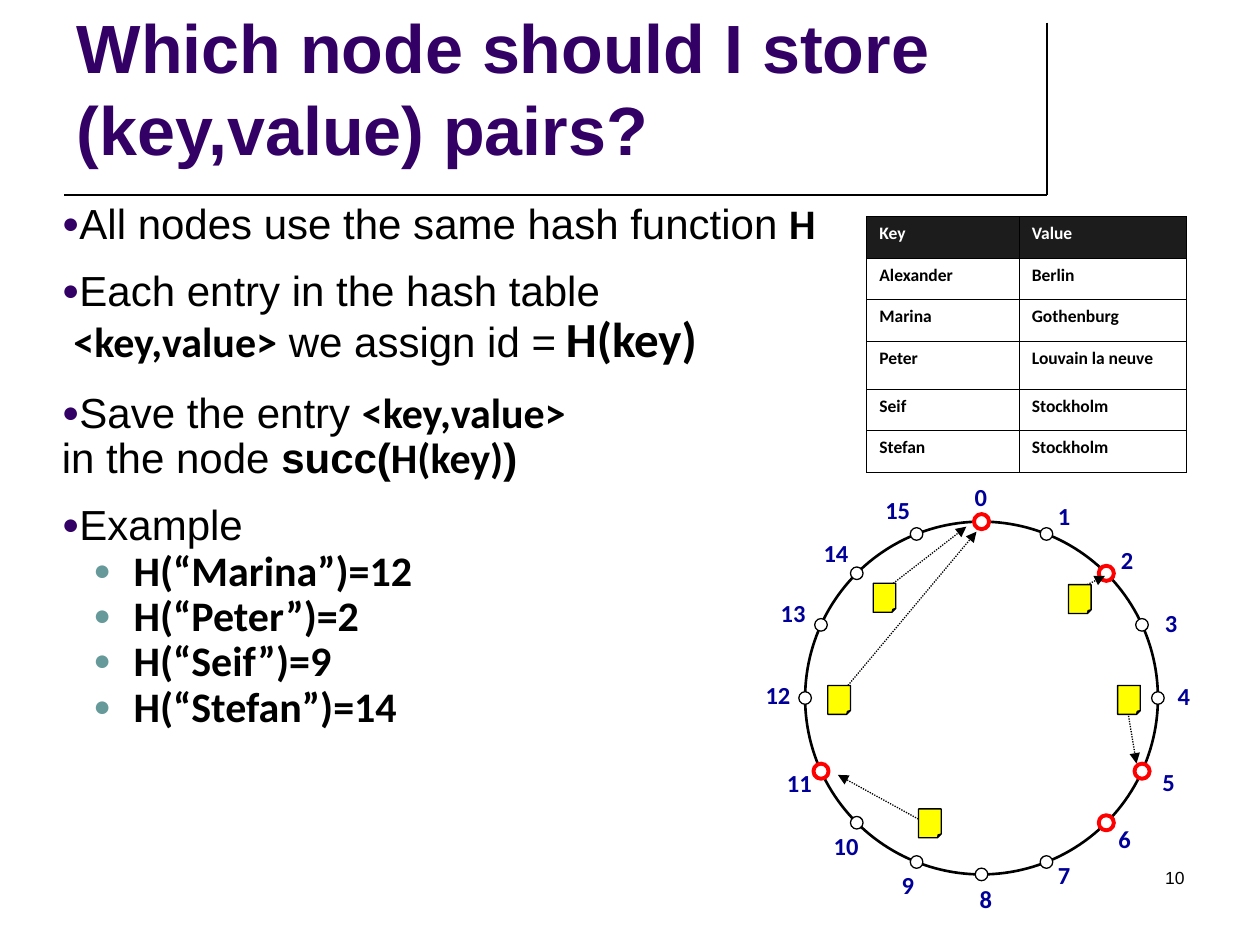
from dataclasses import dataclass
from math import cos, radians, sin

from lxml import etree
from pptx import Presentation
from pptx.dml.color import RGBColor
from pptx.enum.dml import MSO_LINE
from pptx.enum.shapes import MSO_CONNECTOR, MSO_SHAPE
from pptx.enum.text import MSO_ANCHOR, MSO_AUTO_SIZE, PP_ALIGN
from pptx.oxml.ns import qn
from pptx.util import Inches, Pt

STRAIGHT, DOTTED = MSO_CONNECTOR.STRAIGHT, MSO_LINE.ROUND_DOT
OVAL, NOTE = MSO_SHAPE.OVAL, MSO_SHAPE.FOLDED_CORNER
TOP, MIDDLE, BOTTOM = MSO_ANCHOR.TOP, MSO_ANCHOR.MIDDLE, MSO_ANCHOR.BOTTOM
LEFT, CENTER, RIGHT = PP_ALIGN.LEFT, PP_ALIGN.CENTER, PP_ALIGN.RIGHT
NO_AUTOFIT = MSO_AUTO_SIZE.NONE

@dataclass(frozen=True)
class Theme:
    sans: str = "Arial"
    accent_font: str = "Calibri"
    black: str = "000000"
    white: str = "FFFFFF"
    title: str = "330066"
    sub_bullet: str = "669999"
    label: str = "000099"
    active: str = "FF0000"
    note: str = "FFFF00"
    header: str = "1C1C1C"
    title_size: float = 39
    body_size: float = 24
    formula_size: float = 28
    label_size: float = 14
    small_size: float = 10

THEME = Theme()

@dataclass(frozen=True)
class Span:
    text: str
    font: str = THEME.sans
    size: float = THEME.body_size
    bold: bool = False
    color: str = THEME.black

@dataclass(frozen=True)
class Item:
    lines: tuple[tuple[Span, ...], ...]
    gap: float = 0
    level: int = 0

def code(text: str, size: float = THEME.body_size) -> Span:
    return Span(text, THEME.accent_font, size, True)

ITEMS = (
    Item(((Span("All nodes use the same hash function "), code("H")),)),
    Item(((Span("Each entry in the hash table"),),
          (Span(" "), code("<key,value>"), Span(" we assign id ="),
           Span(" ", size=20, bold=True), code("H(key)", THEME.formula_size))), 12.5),
    Item(((Span("Save the entry "), code("<key,value>")),
          (Span("in the node "), Span("succ(", bold=True), code("H(key)"),
           Span(")", bold=True))), 13.5),
    Item(((Span("Example"),),), 12.5),
    *(Item(((code(f"H(“{name}”)={key}"),),), level=1)
      for name, key in (("Marina", 12), ("Peter", 2), ("Seif", 9), ("Stefan", 14))),
)
ENTRIES = (("Key", "Value"), ("Alexander", "Berlin"), ("Marina", "Gothenburg"),
           ("Peter", "Louvain la neuve"), ("Seif", "Stockholm"), ("Stefan", "Stockholm"))
COLUMN_WIDTHS = (1.21, 1.33)
ROW_HEIGHTS = (0.33, 0.33, 0.33, 0.38, 0.33, 0.33)
RING_CENTER, RING_RADIUS = (7.79, 5.54), 1.4
QUARTER_ANGLES = (0, 21.6, 45, 65.5, 90)
ACTIVE_NODES = {0, 2, 5, 6, 11}
LABEL_CORNERS = ((7.55, 3.83), (8.21, 3.98), (8.71, 4.33), (9.06, 4.83),
                 (9.16, 5.41), (9.04, 6.09), (8.69, 6.54), (8.21, 6.83),
                 (7.59, 7.02), (6.97, 6.91), (6.48, 6.6), (6.11, 6.1),
                 (5.94, 5.4), (6.06, 4.75), (6.4, 4.27), (6.89, 3.93))
ARROWS = (((6.73, 5.44), (7.75, 4.22)), ((6.96, 4.73), (7.67, 4.18)),
          ((8.61, 4.65), (8.77, 4.57)), ((8.94, 5.58), (9.02, 6.06)),
          ((7.36, 6.54), (6.65, 6.15)))
NOTE_CORNERS = ((8.87, 5.44), (6.57, 5.44), (6.93, 4.63), (7.29, 6.42), (8.48, 4.64))

def rgb(value: str) -> RGBColor:
    return RGBColor.from_string(value)

def add_span(para, span: Span) -> None:
    run = para.add_run()
    run.text = span.text
    run.font.name, run.font.size, run.font.bold = span.font, Pt(span.size), span.bold
    run.font.color.rgb = rgb(span.color)

def set_frame(shape, left, top, width, height, anchor, margins=(0.1, 0.05)) -> None:
    shape.left, shape.top = Inches(left), Inches(top)
    shape.width, shape.height = Inches(width), Inches(height)
    frame = shape.text_frame
    frame.word_wrap, frame.auto_size, frame.vertical_anchor = True, NO_AUTOFIT, anchor
    frame.margin_left = frame.margin_right = Inches(margins[0])
    frame.margin_top = frame.margin_bottom = Inches(margins[1])

def add_label(page, area, span: Span, align, anchor, margins) -> None:
    box = page.shapes.add_textbox(*map(Inches, area))
    set_frame(box, *area, anchor, margins)
    box.text_frame.paragraphs[0].alignment = align
    add_span(box.text_frame.paragraphs[0], span)

def add_figure(page, kind, area, fill, line: str, weight: float):
    shape = page.shapes.add_shape(kind, *map(Inches, area))
    shape.shadow.inherit = False
    if fill:
        shape.fill.solid()
        shape.fill.fore_color.rgb = rgb(fill)
    else:
        shape.fill.background()
    shape.line.color.rgb, shape.line.width = rgb(line), Pt(weight)
    return shape

def add_line(page, start, end, weight: float, arrow: bool = False) -> None:
    connector = page.shapes.add_connector(STRAIGHT, *map(Inches, start + end))
    connector.line.color.rgb, connector.line.width = rgb(THEME.black), Pt(weight)
    properties = connector.element.spPr
    etree.SubElement(properties, qn("a:effectLst"))
    if arrow:
        connector.line.dash_style = DOTTED
        etree.SubElement(properties.find(qn("a:ln")), qn("a:tailEnd"), type="triangle")

def set_bullet(para, level: int) -> None:
    props = para._p.get_or_add_pPr()
    props.set("marL", str(Inches(0.57 * level)))
    props.set("indent", str(Inches(-0.32 * level)))
    color = etree.SubElement(props, qn("a:buClr"))
    etree.SubElement(color, qn("a:srgbClr"), val=THEME.sub_bullet if level else THEME.title)
    etree.SubElement(props, qn("a:buSzPct"), val="70000")
    etree.SubElement(props, qn("a:buFont"), typeface=THEME.sans)
    etree.SubElement(props, qn("a:buChar"), char="●")

def fill_body(frame) -> None:
    for index, item in enumerate(ITEMS):
        para = frame.add_paragraph() if index else frame.paragraphs[0]
        para.level = item.level
        set_bullet(para, item.level)
        para.alignment, para.line_spacing = LEFT, 0.9
        para.space_before, para.space_after = Pt(item.gap), Pt(0)
        for number, line in enumerate(item.lines):
            if number:
                para.add_line_break()
            for span in line:
                add_span(para, span)

def set_borders(cell) -> None:
    for index, side in enumerate(("lnL", "lnR", "lnT", "lnB")):
        border = etree.Element(qn(f"a:{side}"), w=str(Pt(0.5)))
        fill = etree.SubElement(border, qn("a:solidFill"))
        etree.SubElement(fill, qn("a:srgbClr"), val=THEME.black)
        cell._tc.get_or_add_tcPr().insert(index, border)

def add_entries(page) -> None:
    area = (6.88, 1.72, sum(COLUMN_WIDTHS), sum(ROW_HEIGHTS))
    table = page.shapes.add_table(len(ENTRIES), len(COLUMN_WIDTHS), *map(Inches, area)).table
    table.horz_banding = False
    for column, width in zip(table.columns, COLUMN_WIDTHS):
        column.width = Inches(width)
    for index, (row, height, texts) in enumerate(zip(table.rows, ROW_HEIGHTS, ENTRIES)):
        row.height = Inches(height)
        fill, color = (THEME.white, THEME.black) if index else (THEME.header, THEME.white)
        for cell, text in zip(row.cells, texts):
            cell.fill.solid()
            cell.fill.fore_color.rgb = rgb(fill)
            set_borders(cell)
            para = cell.text_frame.paragraphs[0]
            para.line_spacing = 0.98
            add_span(para, Span(text, THEME.accent_font, THEME.small_size, True, color))

def node_center(node: int) -> tuple[float, float]:
    """Clockwise from the top, mirroring the quarter angles around the ring."""
    half, step = divmod(node, 8)
    angle = QUARTER_ANGLES[step] if step <= 4 else 180 - QUARTER_ANGLES[8 - step]
    turn = radians(angle + 180 * half)
    return RING_CENTER[0] + RING_RADIUS * sin(turn), RING_CENTER[1] - RING_RADIUS * cos(turn)

def add_circle(page, center, diameter: float, fill, line: str, weight: float) -> None:
    corner = (value - diameter / 2 for value in center)
    add_figure(page, OVAL, (*corner, diameter, diameter), fill, line, weight)

def add_ring(page) -> None:
    add_circle(page, RING_CENTER, 2 * RING_RADIUS, None, THEME.black, 1.5)
    for node, corner in enumerate(LABEL_CORNERS):
        size, line, weight = ((0.12, THEME.active, 2.25) if node in ACTIVE_NODES
                              else (0.1, THEME.black, 0.75))
        add_circle(page, node_center(node), size, THEME.white, line, weight)
        span = Span(str(node), THEME.accent_font, THEME.label_size, True, THEME.label)
        add_label(page, (*corner, 0.47, 0.23), span, CENTER, MIDDLE, (0, 0))
    for start, end in ARROWS:
        add_line(page, start, end, 0.75, arrow=True)
    for corner in NOTE_CORNERS:
        add_figure(page, NOTE, (*corner, 0.18, 0.23), THEME.note, THEME.black, 0.75)

deck = Presentation()
deck.slide_width, deck.slide_height = Inches(10), Inches(7.5)
page = deck.slides.add_slide(deck.slide_layouts[1])
title, body = page.placeholders
set_frame(title, 0.51, 0.13, 7.8, 1.26, BOTTOM)
title.text_frame.paragraphs[0].alignment = LEFT
add_span(title.text_frame.paragraphs[0], Span("Which node should I store (key,value) pairs?",
                                              THEME.sans, THEME.title_size, True, THEME.title))
set_frame(body, 0.39, 1.56, 8.47, 5.81, TOP)
fill_body(body.text_frame)
for start in ((8.31, 0.18), (0.51, 1.55)):
    add_line(page, start, (8.31, 1.55), 1)
add_label(page, (7.17, 6.83, 2.33, 0.5), Span("10", size=THEME.small_size), RIGHT, TOP, (0.1, 0.05))
add_ring(page)
add_entries(page)
deck.save("out.pptx")
